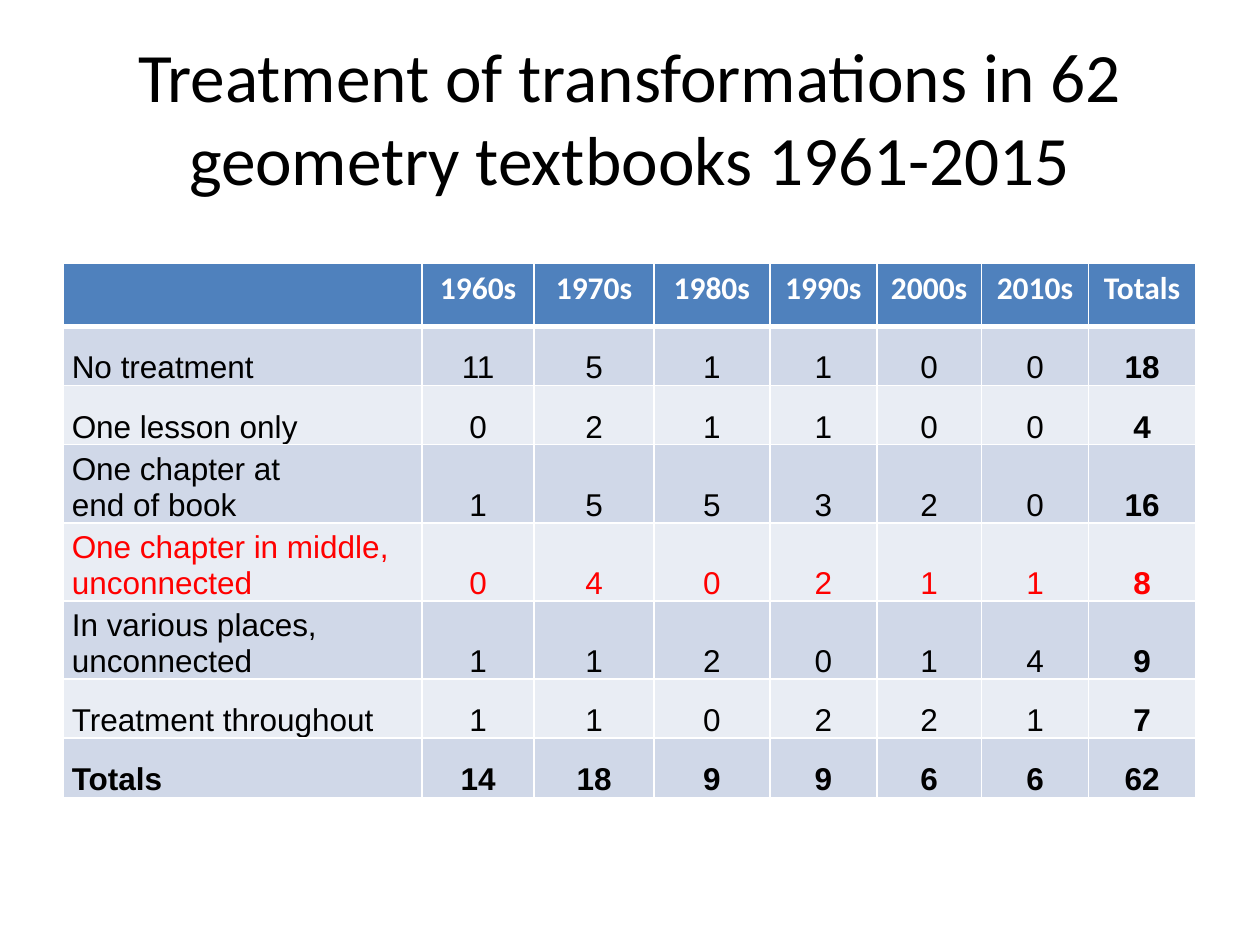
from lxml import etree
from pptx import Presentation, util as u
from pptx.dml.color import RGBColor
from pptx.enum import text
from pptx.oxml.ns import qn

COLORS = {"head": "4F81BD", "odd": "D0D8E8", "even": "E9EDF4",
          "white": "FFFFFF", "black": "000000", "red": "FF0000"}
COLUMNS = [2.85, 0.89, 0.95, 0.92, 0.85, 0.83, 0.85, 0.85]
TALL, SHORT = 0.62, 0.47
ROWS = [0.5, SHORT, SHORT, TALL, TALL, TALL, SHORT, SHORT]
DATA = [
    ["", "1960s", "1970s", "1980s", "1990s", "2000s", "2010s", "Totals"],
    ["No treatment", 11, 5, 1, 1, 0, 0, 18],
    ["One lesson only", 0, 2, 1, 1, 0, 0, 4],
    ["One chapter at \nend of book", 1, 5, 5, 3, 2, 0, 16],
    ["One chapter in middle, unconnected", 0, 4, 0, 2, 1, 1, 8],
    ["In various places, unconnected", 1, 1, 2, 0, 1, 4, 9],
    ["Treatment throughout", 1, 1, 0, 2, 2, 1, 7],
    ["Totals", 14, 18, 9, 9, 6, 6, 62],
]
RED_ROW = 4
LAST_ROW, LAST_COLUMN = len(ROWS) - 1, len(COLUMNS) - 1


def add_words(para, words, size, font, color, bold=False):
    """Add one run per line of words, with line breaks between them."""
    for index, line in enumerate(words.split("\n")):
        if index:
            para.add_line_break()
        span = para.add_run()
        span.text = line
        span.font.size = u.Pt(size)
        span.font.name = font
        span.font.bold = bold
        span.font.color.rgb = RGBColor.from_string(COLORS[color])


def add_border(cell, side, points):
    """Draw a white line on one side (L, R, T or B); call before filling."""
    props = cell._tc.get_or_add_tcPr()
    line = etree.SubElement(props, qn(f"a:ln{side}"), w=str(u.Pt(points)))
    fill = etree.SubElement(line, qn("a:solidFill"))
    etree.SubElement(fill, qn("a:srgbClr"), val=COLORS["white"])


deck = Presentation()
deck.slide_width, deck.slide_height = u.Inches(10), u.Inches(7.5)
page = deck.slides.add_slide(deck.slide_layouts[6])
margin = int(deck.slide_width * 0.05)
content_width = deck.slide_width - 2 * margin

title = page.shapes.add_textbox(margin, int(deck.slide_height * 0.04),
                                content_width, u.Inches(1.25))
title.text_frame.word_wrap = True
title.text_frame.vertical_anchor = text.MSO_ANCHOR.MIDDLE
para = title.text_frame.paragraphs[0]
para.alignment = text.PP_ALIGN.CENTER
add_words(para, "Treatment of transformations in 62 geometry textbooks 1961-2015",
          39.6, "Calibri", "black")

table = page.shapes.add_table(len(ROWS), len(COLUMNS), margin, u.Inches(2.09),
                              content_width, u.Inches(sum(ROWS))).table
for column, width in zip(table.columns, COLUMNS):
    column.width = u.Inches(width)
for row, height in zip(table.rows, ROWS):
    row.height = u.Inches(height)

for r, values in enumerate(DATA):
    is_head = r == 0
    band = "head" if is_head else "odd" if r % 2 else "even"
    ink = "white" if is_head else "red" if r == RED_ROW else "black"
    for c, value in enumerate(values):
        cell = table.cell(r, c)
        for side in "LRTB":
            under_head = (r, side) in [(0, "B"), (1, "T")]
            add_border(cell, side, 3 if under_head else 1)
        cell.fill.solid()
        cell.fill.fore_color.rgb = RGBColor.from_string(COLORS[band])
        para = cell.text_frame.paragraphs[0]
        if c or is_head:
            para.alignment = text.PP_ALIGN.CENTER
        if not is_head:
            cell.vertical_anchor = text.MSO_ANCHOR.BOTTOM
            cell.margin_left = cell.margin_right = u.Inches(0.07)
            cell.margin_top = cell.margin_bottom = 0
            para.space_after = u.Pt(6)
        if value != "":
            bold = is_head or r == LAST_ROW or c == LAST_COLUMN
            add_words(para, str(value), 18, "Calibri" if is_head else "Arial",
                      ink, bold)

deck.save("out.pptx")
